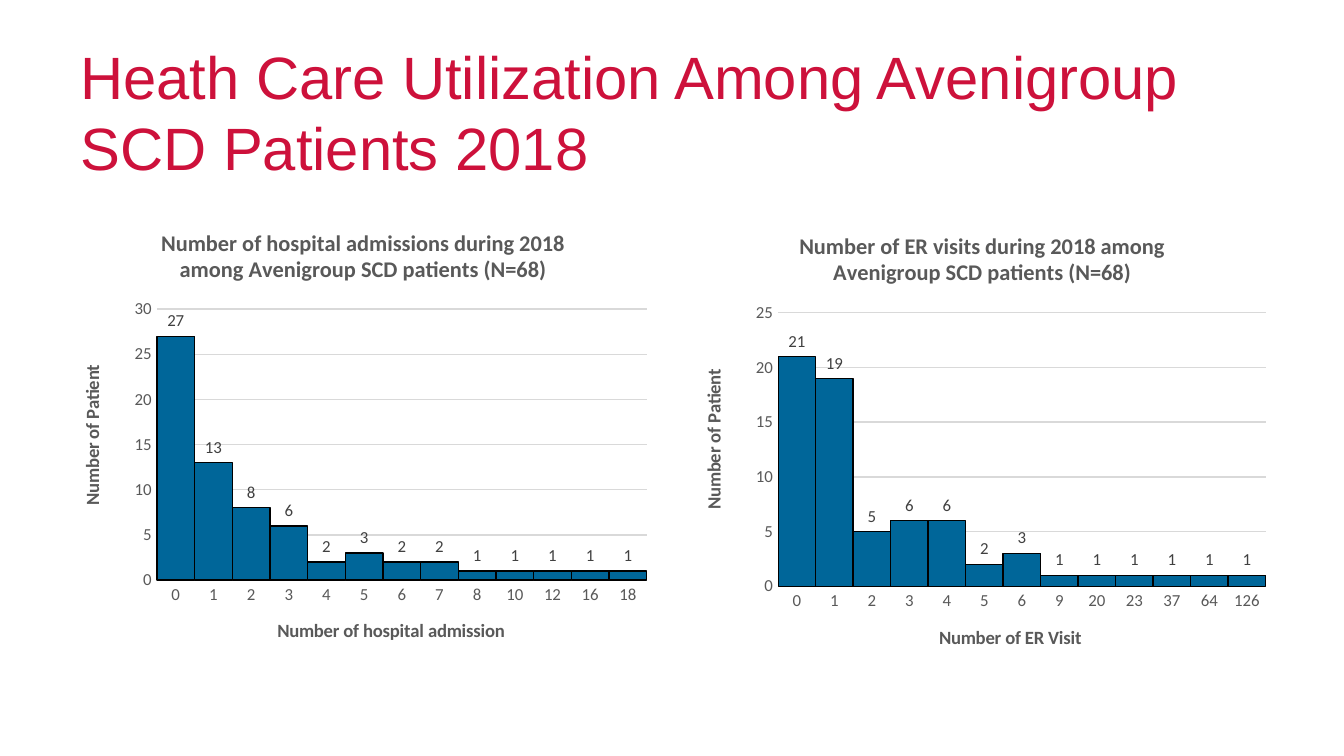
"""Build a slide with two histograms of health care utilization."""
from lxml.etree import SubElement
from pptx import Presentation
from pptx.chart.data import CategoryChartData as ChartData
from pptx.dml.color import RGBColor
from pptx.enum.chart import XL_CHART_TYPE as ChartType
from pptx.enum.chart import XL_LABEL_POSITION as LabelPosition
from pptx.enum.chart import XL_TICK_MARK as TickMark
from pptx.enum.text import MSO_ANCHOR as Anchor
from pptx.oxml.ns import qn
from pptx.util import Emu, Pt

PX = 9525
COLORS = {
    "title": "CD113B",
    "heading": "595959",
    "label": "404040",
    "grid": "D9D9D9",
    "bar": "006699",
    "outline": "000000",
}


def px(length):
    return Emu(length * PX)


def color(name):
    return RGBColor.from_string(COLORS[name])


def style_font(font, size, ink, name="Calibri", bold=False):
    font.size, font.name, font.bold = Pt(size), name, bold
    font.color.rgb = color(ink)


def write(frame, text, **style):
    paragraph = frame.paragraphs[0]
    run = paragraph.add_run()
    run.text = text
    style_font(run.font, **style)
    return paragraph


def style_line(line, ink):
    line.color.rgb = color(ink)
    line.width = Pt(0.75)


def place(element, index, **percents):
    layout = element.find(qn("c:layout"))
    if layout is not None:
        element.remove(layout)
    layout = element.makeelement(qn("c:layout"))
    element.insert(index, layout)
    manual = SubElement(layout, qn("c:manualLayout"))
    if "w" in percents:
        SubElement(manual, qn("c:layoutTarget"), val="inner")
    for axis in "xy":
        SubElement(manual, qn(f"c:{axis}Mode"), val="edge")
    for key, percent in percents.items():
        SubElement(manual, qn(f"c:{key}"), val=str(percent / 100))


class SlideBuilder:
    def __init__(self, width, height):
        self.presentation = Presentation()
        self.presentation.slide_width = px(width)
        self.presentation.slide_height = px(height)
        self.slide = self.presentation.slides.add_slide(self.presentation.slide_layouts[6])

    def title(self, text, *box):
        frame = self.slide.shapes.add_textbox(*map(px, box)).text_frame
        frame.word_wrap = True
        frame.vertical_anchor = Anchor.TOP
        frame.margin_top = px(5)
        paragraph = write(frame, text, size=32, ink="title", name="Arial")
        paragraph.line_spacing = Pt(38)

    def chart_title(self, title, text, size, x, y):
        write(title.text_frame, text, size=size, ink="heading", bold=True)
        place(title._element, 1, x=x, y=y)

    def axis(self, axis, text, x, y):
        axis.major_tick_mark = axis.minor_tick_mark = TickMark.NONE
        style_font(axis.tick_labels.font, 9, "heading")
        self.chart_title(axis.axis_title, text, 10, x, y)

    def histogram(self, box, heading, heading_x, category_title, category_x, counts, top):
        data = ChartData()
        data.categories = list(counts)
        data.add_series("Series 1", counts.values())
        chart = self.slide.shapes.add_chart(ChartType.COLUMN_CLUSTERED, *map(px, box), data).chart
        style_font(chart.font, 10, "outline")
        chart.has_legend = False
        self.chart_title(chart.chart_title, heading, 12, heading_x, 3.5)

        self.axis(chart.category_axis, category_title, category_x, 88.1)
        style_line(chart.category_axis.format.line, "grid")
        values = chart.value_axis
        self.axis(values, "Number of Patient", 1.6, 33.3)
        values.minimum_scale, values.maximum_scale, values.major_unit = 0, top, 5
        values.format.line.fill.background()
        style_line(values.major_gridlines.format.line, "grid")

        plot = chart.plots[0]
        plot.gap_width, plot.overlap, plot.vary_by_categories = 0, -27, False
        bars = plot.series[0]
        bars.format.fill.solid()
        bars.format.fill.fore_color.rgb = color("bar")
        style_line(bars.format.line, "outline")
        labels = bars.data_labels
        labels.show_value = True
        labels.position = LabelPosition.OUTSIDE_END
        style_font(labels.font, 9, "label")
        plot_area = chart._chartSpace.find(".//" + qn("c:plotArea"))
        place(plot_area, 0, x=15.2, y=22, w=82.9, h=58.5)

    def save(self):
        self.presentation.save("out.pptx")


def main():
    admissions = dict(zip(
        "0 1 2 3 4 5 6 7 8 10 12 16 18".split(),
        (27, 13, 8, 6, 2, 3, 2, 2, 1, 1, 1, 1, 1),
    ))
    visits = dict(zip(
        "0 1 2 3 4 5 6 9 20 23 37 64 126".split(),
        (21, 19, 5, 6, 6, 2, 3, 1, 1, 1, 1, 1, 1),
    ))
    builder = SlideBuilder(960, 540)
    builder.title("Heath Care Utilization Among Avenigroup SCD Patients 2018", 48, 24, 864, 57)
    builder.histogram(
        (48, 148, 422, 331),
        "Number of hospital admissions during 2018 among Avenigroup SCD patients (N=68)", 15.2,
        "Number of hospital admission", 35, admissions, 30,
    )
    builder.histogram(
        (492, 150, 420, 334),
        "Number of ER visits during 2018 among Avenigroup SCD patients (N=68)", 18.1,
        "Number of ER Visit", 42, visits, 25,
    )
    builder.save()


if __name__ == "__main__":
    main()
